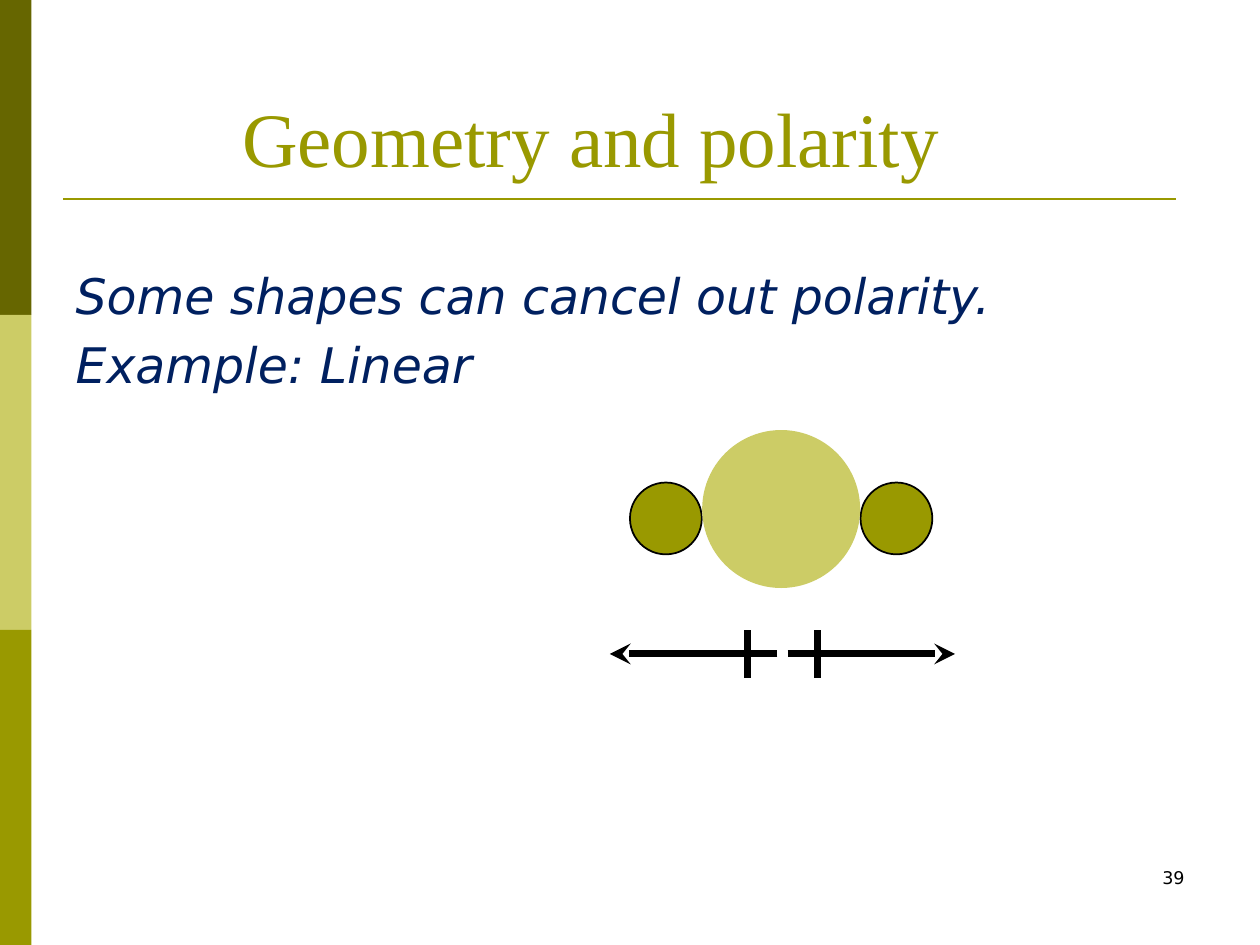
from dataclasses import dataclass
from typing import Any

import pptx
import pptx.dml.color
import pptx.enum.shapes
import pptx.enum.text
import pptx.oxml.xmlchemy
import pptx.util
from pptx.util import Inches

DARK, OLIVE, PALE = "666600", "999900", "CCCC66"
BLACK, NAVY = "000000", "002060"
SANS, SERIF = "DejaVu Sans", "Times New Roman"
KIND = pptx.enum.shapes.MSO_SHAPE
ALIGN = pptx.enum.text.PP_ALIGN
ANCHOR = pptx.enum.text.MSO_ANCHOR


@dataclass
class Block:
    kind: Any
    left: float
    top: float
    width: float
    height: float
    fill: str
    edge: str = ""


@dataclass
class Line:
    start: tuple[float, float]
    end: tuple[float, float]
    tint: str
    weight: float
    arrow: bool = False


def color(code: str) -> pptx.dml.color.RGBColor:
    return pptx.dml.color.RGBColor.from_string(code)


def apply(target: Any, form: dict[str, Any]) -> None:
    for name, value in form.items():
        setattr(target, name, value)


def add_tag(parent: Any, tag: str, **form: str) -> None:
    child = pptx.oxml.xmlchemy.OxmlElement(tag)
    for name, value in form.items():
        child.set(name, value)
    parent.append(child)


def place(shape: Any, left: float, top: float, width: float, height: float) -> None:
    apply(shape, {"left": Inches(left), "top": Inches(top),
                  "width": Inches(width), "height": Inches(height)})


def write(shape: Any, lines: list[str], tint: str, font: dict[str, Any],
          para: dict[str, Any], frame: dict[str, Any]) -> None:
    apply(shape.text_frame, frame)
    shape.text_frame.text = "\n".join(lines)
    for item in shape.text_frame.paragraphs:
        apply(item, para)
        for run in item.runs:
            apply(run.font, font)
            run.font.color.rgb = color(tint)


def draw_block(slide: Any, block: Block) -> None:
    shape = slide.shapes.add_shape(
        block.kind, Inches(block.left), Inches(block.top),
        Inches(block.width), Inches(block.height))
    shape.shadow.inherit = False
    shape.fill.solid()
    shape.fill.fore_color.rgb = color(block.fill)
    if block.edge:
        shape.line.color.rgb = color(block.edge)
        shape.line.width = pptx.util.Pt(1)
    else:
        shape.line.fill.background()


def draw_line(slide: Any, line: Line) -> None:
    ends = [Inches(value) for value in (*line.start, *line.end)]
    shape = slide.shapes.add_connector(pptx.enum.shapes.MSO_CONNECTOR.STRAIGHT, *ends)
    shape.line.color.rgb = color(line.tint)
    shape.line.width = pptx.util.Pt(line.weight)
    props = shape._element.spPr
    if line.arrow:
        add_tag(props.get_or_add_ln(), "a:tailEnd", type="stealth")
    add_tag(props, "a:effectLst")


def drop_bullet(item: Any) -> None:
    props = item._p.get_or_add_pPr()
    for name in ("marL", "indent"):
        props.set(name, "0")
    add_tag(props, "a:buNone")


def main() -> None:
    deck = pptx.Presentation()
    apply(deck, {"slide_width": Inches(10), "slide_height": Inches(7.5)})
    slide = deck.slides.add_slide(deck.slide_layouts[1])
    fixed = {"word_wrap": True, "auto_size": pptx.enum.text.MSO_AUTO_SIZE.NONE}

    title, body = slide.placeholders
    place(title, 0.44, 0.73, 8.5, 0.77)
    write(title, ["Geometry and polarity"], OLIVE,
          {"name": SERIF, "size": pptx.util.Pt(44)},
          {"alignment": ALIGN.CENTER},
          fixed | {"vertical_anchor": ANCHOR.BOTTOM})
    place(body, 0.5, 2.06, 8.94, 1.67)
    write(body, ["Some shapes can cancel out polarity.", "Example: Linear"], NAVY,
          {"name": SANS, "size": pptx.util.Pt(28), "italic": True},
          {"alignment": ALIGN.LEFT},
          fixed | {"vertical_anchor": ANCHOR.TOP})
    for item in body.text_frame.paragraphs:
        drop_bullet(item)

    for row, fill in enumerate((DARK, PALE, OLIVE)):
        draw_block(slide, Block(KIND.RECTANGLE, 0, row * 2.5, 0.25, 2.5, fill))
    draw_line(slide, Line((0.5, 1.58), (9.33, 1.58), OLIVE, 1.5))

    number = slide.shapes.add_textbox(
        Inches(7.17), Inches(6.83), Inches(2.33), Inches(0.5))
    write(number, ["39"], BLACK, {"name": SANS, "size": pptx.util.Pt(10)},
          {"alignment": ALIGN.RIGHT}, fixed)

    for left in (5, 6.83):
        draw_block(slide, Block(KIND.OVAL, left, 3.83, 0.57, 0.57, OLIVE, BLACK))
    draw_block(slide, Block(KIND.OVAL, 5.58, 3.42, 1.24, 1.24, PALE, PALE))

    mid, level = 6.21, 5.19
    for side in (1, -1):
        tick = mid + side * 0.28
        draw_line(slide, Line((mid + side * 0.04, level),
                              (mid + side * 1.37, level), BLACK, 4, True))
        draw_line(slide, Line((tick, 5), (tick, 5.38), BLACK, 4))

    deck.save("out.pptx")


if __name__ == "__main__":
    main()
